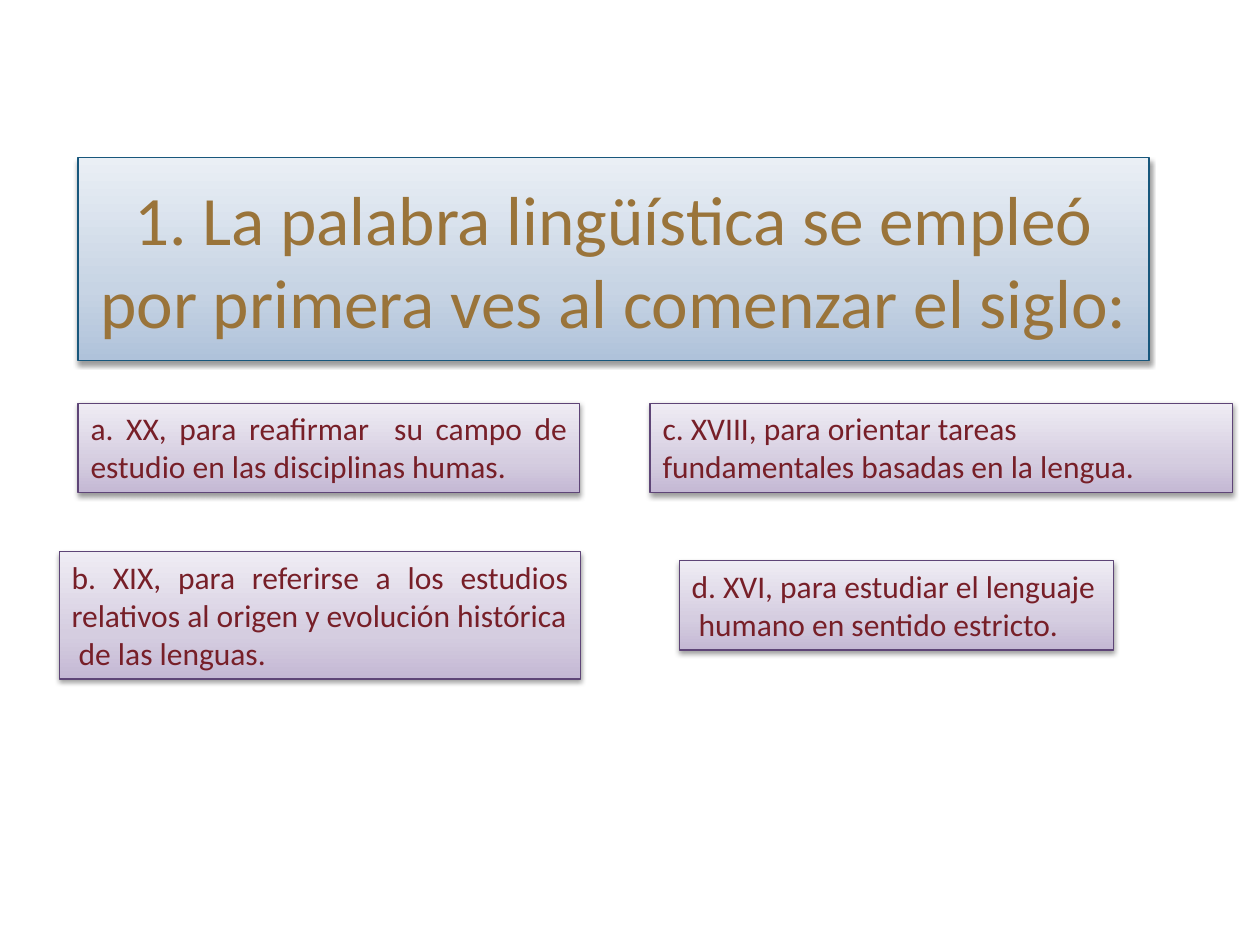
from copy import deepcopy
from lxml.etree import SubElement
from pptx import Presentation
from pptx.dml.color import RGBColor
from pptx.enum.text import MSO_ANCHOR, MSO_AUTO_SIZE, PP_ALIGN
from pptx.oxml.ns import qn
from pptx.util import Inches, Pt

GOLD = RGBColor(0x9A, 0x74, 0x3A)
WINE = RGBColor(0x77, 0x1F, 0x28)
NAVY = RGBColor(0x18, 0x57, 0x7C)
PLUM = RGBColor(0x5E, 0x45, 0x77)
BLUES = [RGBColor(0xAF, 0xC2, 0xDA), RGBColor(0xC7, 0xD4, 0xE4), RGBColor(0xEA, 0xEF, 0xF5)]
LILACS = [RGBColor(0xC4, 0xB8, 0xD4), RGBColor(0xD5, 0xCD, 0xE0), RGBColor(0xEF, 0xEC, 0xF4)]
STOPS = [0, 0.35, 1]

deck = Presentation()
deck.slide_width, deck.slide_height = Inches(10), Inches(7.5)
slide = deck.slides.add_slide(deck.slide_layouts[0])


def place(shape, left, top, width, height):
    """Set the frame in percent of the slide's size."""
    frame = {"left": deck.slide_width * left, "top": deck.slide_height * top,
             "width": deck.slide_width * width, "height": deck.slide_height * height}
    for key, size in frame.items():
        setattr(shape, key, round(size / 100))


def style(shape, shades, edge, align, font):
    """Give a box its gradient, edge, soft shadow and text format."""
    shape.fill.gradient()
    shape.fill.gradient_angle = 90
    stops = shape.element.spPr.find(qn("a:gradFill")).find(qn("a:gsLst"))
    stops.append(deepcopy(stops[0]))
    for stop, pos, shade in zip(shape.fill.gradient_stops, STOPS, shades):
        stop.position, stop.color.rgb = pos, shade
    shape.line.color.rgb = edge
    shape.line.width = Pt(0.75)

    shape.shadow.inherit = False
    glow = SubElement(shape.element.spPr.find(qn("a:effectLst")), qn("a:outerShdw"),
                      blurRad=str(Pt(3.1)), dist=str(Pt(1.6)), dir="5400000", rotWithShape="0")
    tint = SubElement(glow, qn("a:srgbClr"), val="000000")
    SubElement(tint, qn("a:alpha"), val="38000")

    for para in shape.text_frame.paragraphs:
        para.alignment = align
        para.font.color.rgb = font["color"]
        for key in ("name", "size"):
            setattr(para.font, key, font[key])


# Question
title = slide.shapes.title
place(title, 6.2, 16.67, 85, 21.47)
title.text_frame.text = "1. La palabra lingüística se empleó por primera ves al comenzar el siglo:"
title.text_frame.auto_size = MSO_AUTO_SIZE.NONE
title.text_frame.vertical_anchor = MSO_ANCHOR.MIDDLE
style(title, BLUES, NAVY, PP_ALIGN.CENTER,
      {"name": "Calibri", "size": Pt(39.6), "color": GOLD})

# The subtitle is not needed
sub = slide.placeholders[1].element
sub.getparent().remove(sub)

# Answers
answers = [
    ((6.2, 42.67, 39.8, 9.47),
     "a. XX, para reafirmar  su campo de estudio en las disciplinas humas."),
    ((4.7, 58.4, 41.4, 13.47),
     "b. XIX, para referirse a los estudios relativos al origen y evolución histórica\n de las lenguas."),
    ((51.6, 42.67, 46.2, 9.47),
     "c. XVIII, para orientar tareas\nfundamentales basadas en la lengua."),
    ((53.9, 59.33, 34.5, 9.47),
     "d. XVI, para estudiar el lenguaje\n humano en sentido estricto."),
]
for frame, text in answers:
    box = slide.shapes.add_textbox(0, 0, 0, 0)
    place(box, *frame)
    box.text_frame.word_wrap = True
    box.text_frame.auto_size = MSO_AUTO_SIZE.SHAPE_TO_FIT_TEXT
    box.text_frame.text = text
    style(box, LILACS, PLUM, PP_ALIGN.JUSTIFY,
          {"name": "Calibri", "size": Pt(18), "color": WINE})

deck.save("out.pptx")
